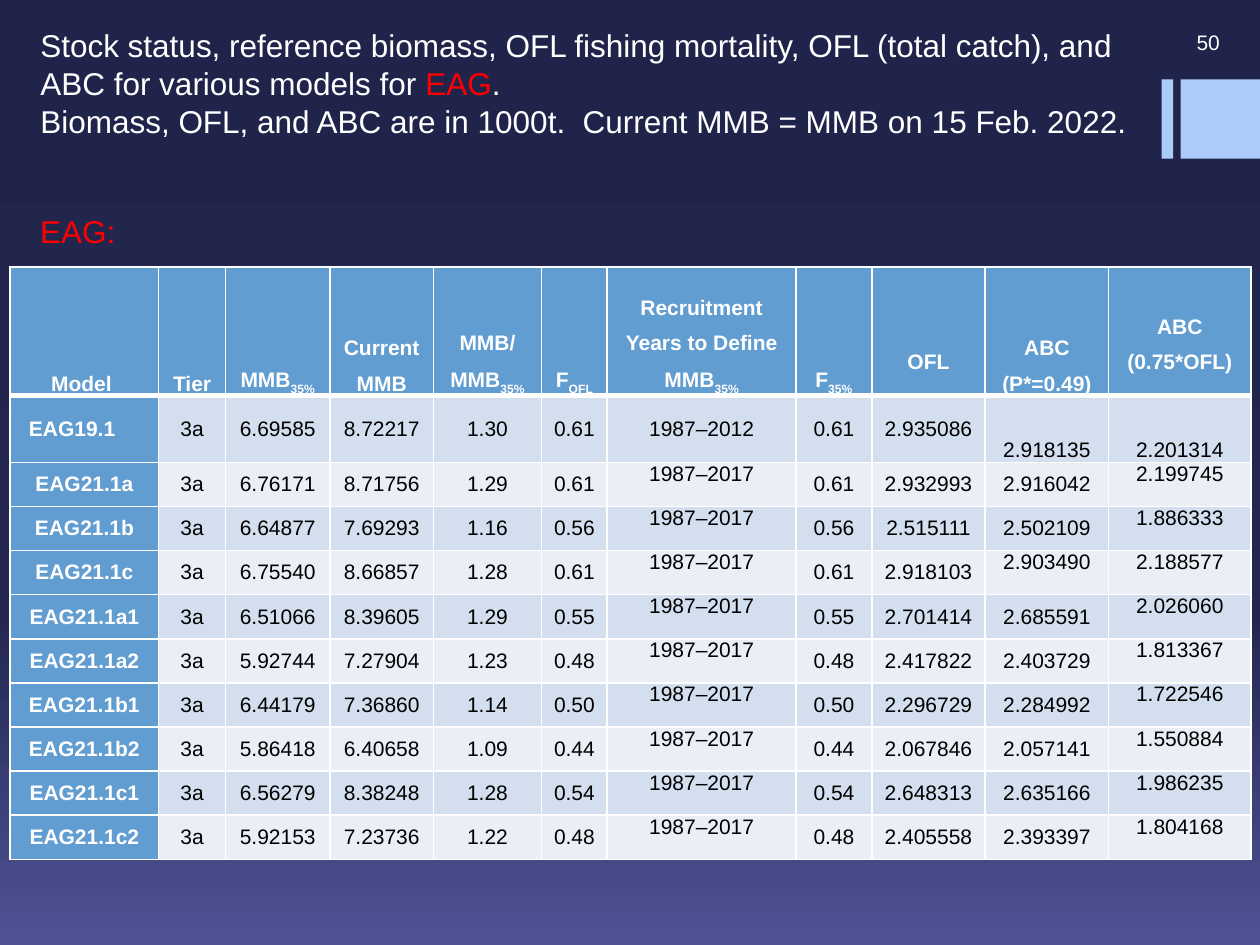
from copy import deepcopy

from lxml import etree
from pptx import Presentation
from pptx.dml.color import RGBColor
from pptx.enum import shapes, text
from pptx.oxml import ns
from pptx.util import Inches, Pt

WHITE = RGBColor(0xFF, 0xFF, 0xFF)
BLACK = RGBColor(0, 0, 0)
RED = RGBColor(0xFF, 0, 0)
PALE_BLUE = RGBColor(0xAC, 0xCB, 0xF9)
HEADER_BLUE = RGBColor(0x62, 0x9D, 0xD1)
BANDS = (RGBColor(0xD3, 0xDF, 0xEE), RGBColor(0xEA, 0xEF, 0xF7))
BACKGROUND = (
    (0, RGBColor(0x21, 0x24, 0x4A)),
    (0.65, RGBColor(0x23, 0x27, 0x50)),
    (1, RGBColor(0x4F, 0x53, 0x95)),
)

HEADLINE = [
    [("Stock status, reference biomass, OFL fishing mortality, OFL (total catch), "
      "and ABC for various models for ", WHITE), ("EAG", RED), (".", WHITE)],
    [("Biomass, OFL, and ABC are in 1000t.  Current MMB = MMB on 15 Feb. 2022.", WHITE)],
]

# Column heading and width; "_" starts a subscript, "\n" a new paragraph
COLUMNS = [
    ("Model ", 1.18), ("Tier", 0.53), ("MMB_35%", 0.83), ("Current MMB", 0.82),
    ("MMB/\nMMB_35%", 0.86), ("F_OFL", 0.52),
    ("Recruitment Years to Define MMB_35%", 1.5), ("F_35%", 0.6), ("OFL", 0.9),
    ("ABC\n(P*=0.49)", 0.98), ("ABC\n(0.75*OFL)", 1.13),
]
YEARS, OFL, ABC_P, ABC_75 = 6, 8, 9, 10
HEADING_TOP_MARGINS = {OFL: 0.57, ABC_75: 0.29}

MODELS = [
    ("EAG19.1", "3a", "6.69585", "8.72217", "1.30", "0.61", "1987–2012", "0.61", "2.935086", "2.918135", "2.201314"),
    ("EAG21.1a", "3a", "6.76171", "8.71756", "1.29", "0.61", "1987–2017", "0.61", "2.932993", "2.916042", "2.199745"),
    ("EAG21.1b", "3a", "6.64877", "7.69293", "1.16", "0.56", "1987–2017", "0.56", "2.515111", "2.502109", "1.886333"),
    ("EAG21.1c", "3a", "6.75540", "8.66857", "1.28", "0.61", "1987–2017", "0.61", "2.918103", "2.903490", "2.188577"),
    ("EAG21.1a1", "3a", "6.51066", "8.39605", "1.29", "0.55", "1987–2017", "0.55", "2.701414", "2.685591", "2.026060"),
    ("EAG21.1a2", "3a", "5.92744", "7.27904", "1.23", "0.48", "1987–2017", "0.48", "2.417822", "2.403729", "1.813367"),
    ("EAG21.1b1", "3a", "6.44179", "7.36860", "1.14", "0.50", "1987–2017", "0.50", "2.296729", "2.284992", "1.722546"),
    ("EAG21.1b2", "3a", "5.86418", "6.40658", "1.09", "0.44", "1987–2017", "0.44", "2.067846", "2.057141", "1.550884"),
    ("EAG21.1c1", "3a", "6.56279", "8.38248", "1.28", "0.54", "1987–2017", "0.54", "2.648313", "2.635166", "1.986235"),
    ("EAG21.1c2", "3a", "5.92153", "7.23736", "1.22", "0.48", "1987–2017", "0.48", "2.405558", "2.393397", "1.804168"),
]
ROW_HEIGHTS = [1.02, 0.53] + [0.35] * (len(MODELS) - 1)


def add_run(paragraph, words, size, color, bold=False):
    run = paragraph.add_run()
    run.text = words
    font = run.font
    font.name, font.size, font.bold = "Arial", Pt(size), bold
    font.color.rgb = color
    return run


def paint_background(slide):
    fill = slide.background.fill
    fill.gradient()
    fill.gradient_angle = 270
    stop_list = slide.element.find(".//" + ns.qn("a:gsLst"))
    stop_list.append(deepcopy(stop_list[0]))
    for stop, (position, color) in zip(fill.gradient_stops, BACKGROUND):
        stop.position = position
        stop.color.rgb = color


def add_label(slide, box, words, size, color, align, anchor):
    frame = slide.shapes.add_textbox(*map(Inches, box)).text_frame
    frame.word_wrap = True
    frame.vertical_anchor = anchor
    frame.paragraphs[0].alignment = align
    add_run(frame.paragraphs[0], words, size, color)


def add_headline(slide):
    title = slide.shapes.title
    title.left, title.top, title.width, title.height = map(Inches, (0.22, 0.16, 9.11, 1.62))
    frame = title.text_frame
    frame.auto_size = text.MSO_AUTO_SIZE.NONE
    frame.vertical_anchor = text.MSO_ANCHOR.TOP
    for number, parts in enumerate(HEADLINE):
        paragraph = frame.add_paragraph() if number else frame.paragraphs[0]
        paragraph.alignment = text.PP_ALIGN.LEFT
        for words, color in parts:
            add_run(paragraph, words, 18, color)


def style_cell(cell, row, color, anchor):
    """Set borders, fill, margins and anchor; the header is ruled off by a thick line."""
    properties = cell._tc.get_or_add_tcPr()
    thick_side = {0: "B", 1: "T"}.get(row)
    for side in "LRTB":
        line = etree.SubElement(properties, ns.qn("a:ln" + side),
                                w=str(Pt(3 if side == thick_side else 1)))
        solid = etree.SubElement(line, ns.qn("a:solidFill"))
        etree.SubElement(solid, ns.qn("a:srgbClr"), val=str(WHITE))
    cell.fill.solid()
    cell.fill.fore_color.rgb = color
    cell.margin_left = cell.margin_right = Inches(0.06)
    cell.margin_top = cell.margin_bottom = 0
    cell.vertical_anchor = anchor


def fill_heading(cell, column, heading):
    top_margin = HEADING_TOP_MARGINS.get(column)
    anchor = text.MSO_ANCHOR.TOP if top_margin else text.MSO_ANCHOR.BOTTOM
    style_cell(cell, 0, HEADER_BLUE, anchor)
    cell.margin_top = Inches(top_margin or 0)
    for number, line in enumerate(heading.split("\n")):
        frame = cell.text_frame
        paragraph = frame.add_paragraph() if number else frame.paragraphs[0]
        paragraph.alignment = text.PP_ALIGN.CENTER
        paragraph.line_spacing = 1.5
        base, _, subscript = line.partition("_")
        add_run(paragraph, base, 12, WHITE, True)
        if subscript:
            run = add_run(paragraph, subscript, 12, WHITE, True)
            run._r.get_or_add_rPr().set("baseline", "-25000")


def value_anchor(row, column):
    if row == 1:
        return text.MSO_ANCHOR.BOTTOM if column in (ABC_P, ABC_75) else text.MSO_ANCHOR.MIDDLE
    if column in (YEARS, ABC_75) or (row, column) == (4, ABC_P):
        return text.MSO_ANCHOR.TOP
    return text.MSO_ANCHOR.MIDDLE


def add_model_table(slide):
    widths = [width for _, width in COLUMNS]
    table = slide.shapes.add_table(
        len(ROW_HEIGHTS), len(COLUMNS), Inches(0.08), Inches(2.12),
        Inches(sum(widths)), Inches(sum(ROW_HEIGHTS))).table
    for row, height in zip(table.rows, ROW_HEIGHTS):
        row.height = Inches(height)
    for column, (heading, width) in enumerate(COLUMNS):
        table.columns[column].width = Inches(width)
        fill_heading(table.cell(0, column), column, heading)
    for row, values in enumerate(MODELS, start=1):
        for column, value in enumerate(values):
            cell = table.cell(row, column)
            is_model = column == 0
            band = HEADER_BLUE if is_model else BANDS[(row - 1) % 2]
            style_cell(cell, row, band, value_anchor(row, column))
            paragraph = cell.text_frame.paragraphs[0]
            paragraph.alignment = text.PP_ALIGN.CENTER
            add_run(paragraph, value, 12, WHITE if is_model else BLACK, is_model)
    first_model = table.cell(1, 0)
    first_model.margin_left = Inches(0.15)
    first_model.text_frame.paragraphs[0].alignment = text.PP_ALIGN.LEFT


def main():
    deck = Presentation()
    deck.slide_width, deck.slide_height = Inches(10), Inches(7.5)
    slide = deck.slides.add_slide(deck.slide_layouts[5])
    paint_background(slide)
    for left, width in ((9.22, 0.09), (9.37, 0.63)):
        accent = slide.shapes.add_shape(
            shapes.MSO_SHAPE.RECTANGLE, *map(Inches, (left, 0.63, width, 0.63)))
        accent.shadow.inherit = False
        accent.fill.solid()
        accent.fill.fore_color.rgb = PALE_BLUE
        accent.line.fill.background()
    add_label(slide, (8.75, 0.17, 1.03, 0.33), "50", 12, WHITE,
              text.PP_ALIGN.RIGHT, text.MSO_ANCHOR.MIDDLE)
    add_headline(slide)
    add_label(slide, (0.22, 1.63, 1.03, 0.4), "EAG:", 18, RED,
              text.PP_ALIGN.LEFT, text.MSO_ANCHOR.TOP)
    add_model_table(slide)
    deck.save("out.pptx")


if __name__ == "__main__":
    main()
